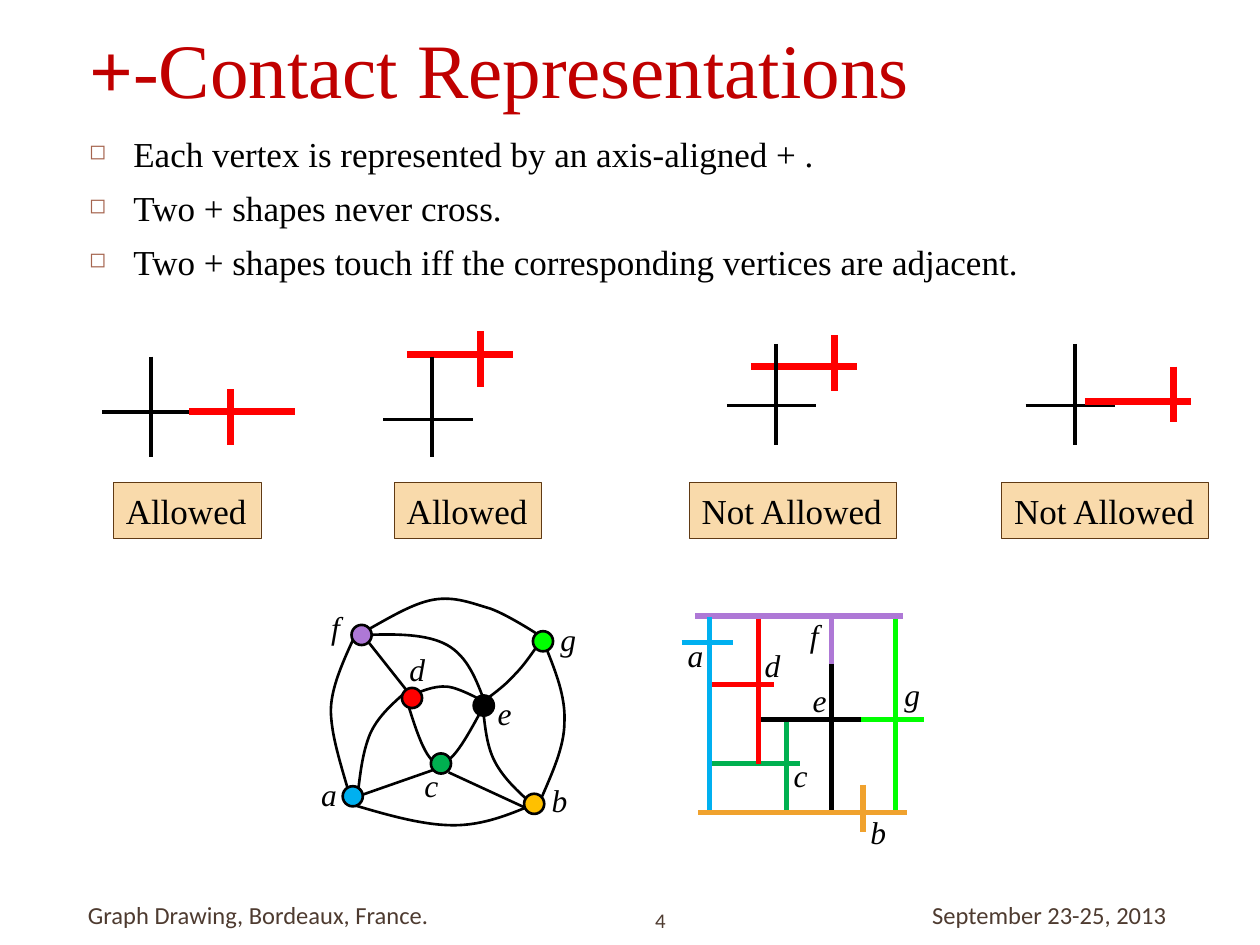
from lxml import etree
from pptx import Presentation
from pptx.dml.color import RGBColor
from pptx.enum.shapes import MSO_CONNECTOR, MSO_SHAPE
from pptx.enum.text import MSO_ANCHOR, MSO_AUTO_SIZE, PP_ALIGN
from pptx.oxml.ns import qn
from pptx.util import Inches, Pt

STRAIGHT = MSO_CONNECTOR.STRAIGHT
RECT, OVAL = MSO_SHAPE.RECTANGLE, MSO_SHAPE.OVAL
TOP, MIDDLE = MSO_ANCHOR.TOP, MSO_ANCHOR.MIDDLE
LEFT, RIGHT = PP_ALIGN.LEFT, PP_ALIGN.RIGHT
FIT = MSO_AUTO_SIZE.SHAPE_TO_FIT_TEXT

SERIF, SANS = "Times New Roman", "Calibri"
BLACK = RGBColor(0x00, 0x00, 0x00)
RED = RGBColor(0xFF, 0x00, 0x00)
GREEN = RGBColor(0x00, 0xB0, 0x50)
LIME = RGBColor(0x00, 0xFF, 0x00)
BLUE = RGBColor(0x00, 0xB0, 0xF0)
PURPLE = RGBColor(0xAE, 0x78, 0xD6)
YELLOW = RGBColor(0xFF, 0xC0, 0x00)
ORANGE = RGBColor(0xF0, 0xA2, 0x2E)
CRIMSON = RGBColor(0xC0, 0x00, 0x00)
BROWN = RGBColor(0x4E, 0x3B, 0x30)
SAND = RGBColor(0xF9, 0xDA, 0xAB)
UMBER = RGBColor(0x60, 0x3A, 0x14)

SLIDE_W, SLIDE_H = Inches(10), Inches(7.5)
COL, ROW = SLIDE_W // 1000, SLIDE_H // 750
NODE = 16
LABEL_W = {"a": 34, "b": 33, "c": 31, "d": 34, "e": 31, "f": 27, "g": 33}

BULLETS = [
    "Each vertex is represented by an axis-aligned + .",
    "Two + shapes never cross.",
    "Two + shapes touch iff the corresponding vertices are adjacent.",
]
EDGES = [
    [(36, 156), (31, 139), (26, 122), (24, 109), (22, 96), (22, 89), (25, 77),
     (28, 65), (34, 51), (41, 36)],
    [(48, 32), (68, 21), (87, 9), (104, 6), (121, 3), (135, 9), (149, 13),
     (163, 18), (186, 33), (186, 33)],
    [(41, 169), (68, 177), (96, 185), (120, 185), (143, 185), (163, 177), (182, 169)],
    [(193, 43), (201, 63), (209, 83), (208, 103), (208, 123), (198, 144), (189, 165)],
    [(44, 160), (46, 143), (48, 126), (54, 112), (60, 99), (70, 90), (80, 81)],
    [(48, 34), (86, 82)],
    [(49, 34), (74, 33), (99, 33), (115, 42), (131, 51), (138, 69), (145, 88)],
    [(182, 168), (171, 158), (160, 148), (153, 135), (146, 122), (145, 106), (143, 90)],
    [(82, 83), (90, 109), (98, 135), (108, 136), (118, 138), (130, 116), (142, 94)],
    [(83, 83), (94, 79), (104, 74), (115, 75), (125, 76), (142, 86), (147, 88),
     (152, 91), (148, 90), (144, 89)],
    [(146, 85), (154, 79), (162, 73), (169, 65), (176, 58), (182, 49), (189, 39)],
    [(44, 162), (107, 140)],
    [(181, 173), (116, 143)],
]
NODES = [(39, 26, PURPLE), (32, 154, BLUE), (183, 31, LIME), (176, 160, YELLOW),
         (79, 76, RED), (136, 82, BLACK), (102, 128, GREEN)]
GRAPH_LABELS = {"a": (5, 140), "d": (75, 41), "f": (13, 8), "g": (195, 17),
                "e": (145, 76), "c": (87, 133), "b": (188, 145)}
ARMS = [
    (94, 90, 94, 165, GREEN), (34, 63, 84, 63, RED), (11, 30, 52, 30, BLUE),
    (33, 126, 105, 126, GREEN), (74, 91, 153, 91, BLACK), (153, 91, 203, 91, LIME),
    (22, 9, 187, 9, PURPLE), (33, 10, 33, 163, BLUE), (72, 11, 72, 126, RED),
    (130, 44, 130, 163, BLACK), (181, 11, 181, 166, LIME), (130, 10, 130, 47, PURPLE),
    (24, 165, 190, 165, ORANGE), (155, 143, 155, 180, ORANGE),
]
ARM_LABELS = {"g": (178, 51), "e": (105, 56), "f": (103, 4), "d": (67, 28),
              "c": (90, 115), "b": (151, 160), "a": (6, 20)}
CASES = [
    (81, "Allowed", 9, 117, (0, 20, 39, 44), (69, 46, 33, 18)),
    (304, "Allowed", 9, 117, (0, 20, 39, 50), (19, 0, 58, 18)),
    (577, "Not Allowed", -30, 164, (0, 10, 39, 49), (19, 3, 66, 25)),
    (814, "Not Allowed", -19, 164, (0, 10, 39, 49), (47, 28, 70, 28)),
]


def grid(x, y, w, h):
    """Turn grid columns and rows into slide lengths."""
    return x * COL, y * ROW, w * COL, h * ROW


def style(p, font, size, color, bold=False, italic=False):
    """Format every run of a paragraph."""
    for r in p.runs:
        r.font.name, r.font.size = font, Pt(size)
        r.font.bold, r.font.italic = bold, italic
        r.font.color.rgb = color


def add_text(slide, box, text, font, size, color, anchor=TOP, align=LEFT,
             wrap=True, italic=False):
    """Add a text box in the given grid box and return its frame."""
    tf = slide.shapes.add_textbox(*grid(*box)).text_frame
    tf.word_wrap, tf.vertical_anchor = wrap, anchor
    tf.text = text
    for p in tf.paragraphs:
        p.alignment = align
        style(p, font, size, color, italic=italic)
    return tf


def add_line(slide, box, x1, y1, x2, y2, color, width):
    """Draw a straight line relative to the box."""
    x, y = box[:2]
    sp = slide.shapes.add_connector(STRAIGHT, (x + x1) * COL, (y + y1) * ROW,
                                    (x + x2) * COL, (y + y2) * ROW)
    sp.line.color.rgb, sp.line.width = color, Pt(width)
    etree.SubElement(sp._element.spPr, qn("a:effectLst"))


def add_edge(slide, box, points):
    """Draw a segment or a chain of Bezier curves relative to the box."""
    fb = slide.shapes.build_freeform(*points[0], scale=(COL, ROW))
    fb.add_line_segments(points[1:], close=False)
    sp = fb.convert_to_shape(box[0] * COL, box[1] * ROW)
    sp.shadow.inherit = False
    sp.fill.background()
    sp.line.color.rgb, sp.line.width = BLACK, Pt(1.5)
    steps = list(sp._element.iter(qn("a:lnTo")))
    for i in range(0, len(steps) - 2, 3):
        curve = etree.Element(qn("a:cubicBezTo"))
        steps[i].addprevious(curve)
        for step in steps[i:i + 3]:
            curve.append(step[0])
            step.getparent().remove(step)


def add_block(slide, kind, box, fill, line, width):
    """Add a filled and outlined preset shape."""
    sp = slide.shapes.add_shape(kind, *grid(*box))
    sp.shadow.inherit = False
    sp.fill.solid()
    sp.fill.fore_color.rgb = fill
    sp.line.color.rgb, sp.line.width = line, Pt(width)
    return sp


def add_labels(slide, box, labels):
    """Name the vertices relative to the box."""
    for name, (x, y) in labels.items():
        tf = add_text(slide, (box[0] + x, box[1] + y, LABEL_W[name], 40), name,
                      SERIF, 18, BLACK, wrap=False, italic=True)
        tf.auto_size = FIT


def add_title(slide, box):
    """Place the title with its bold plus sign."""
    tf = add_text(slide, box, "+", SERIF, 44, CRIMSON, MIDDLE)
    p = tf.paragraphs[0]
    p.add_run().text = "-Contact Representations"
    style(p, SERIF, 44, CRIMSON)
    p.runs[0].font.bold = True


def add_bullets(slide, box):
    """Place the list of rules with square bullets."""
    tf = add_text(slide, box, "\n".join(BULLETS), SERIF, 20, BLACK)
    for p in tf.paragraphs:
        p.space_before = Pt(7)
        pPr = p._p.get_or_add_pPr()
        pPr.set("marL", str(35 * COL))
        pPr.set("indent", str(-35 * COL))
        clr = etree.SubElement(pPr, qn("a:buClr"))
        etree.SubElement(clr, qn("a:srgbClr"), val="A5644E")
        etree.SubElement(pPr, qn("a:buSzPct"), val="60000")
        etree.SubElement(pPr, qn("a:buChar"), char="◻")


def add_case(slide, box, label, label_x, label_w, black, red):
    """Place a black and a red plus with the verdict below."""
    pluses = [(*black, 71, 80, BLACK, 2), (*red, 84, 44, RED, 4)]
    for x, y, hub_x, hub_y, w, h, color, width in pluses:
        add_line(slide, box, x, y + hub_y, x + w, y + hub_y, color, width)
    for x, y, hub_x, hub_y, w, h, color, width in pluses:
        add_line(slide, box, x + hub_x, y, x + hub_x, y + h, color, width)
    x, y, w, h = box
    sp = add_block(slide, RECT, (x + label_x, y + h - 44, label_w, 44), SAND, UMBER, 0.25)
    tf = sp.text_frame
    tf.text, tf.word_wrap, tf.auto_size = label, False, FIT
    tf.paragraphs[0].alignment = LEFT
    style(tf.paragraphs[0], SERIF, 20, BLACK)


def add_graph(slide, box):
    """Draw the planar graph."""
    for points in EDGES:
        add_edge(slide, box, points)
    for x, y, color in NODES:
        add_block(slide, OVAL, (box[0] + x, box[1] + y, NODE, NODE), color, BLACK, 1.5)
    add_labels(slide, box, GRAPH_LABELS)


def add_contacts(slide, box):
    """Draw the contact representation of the graph."""
    for *ends, color in ARMS:
        add_line(slide, box, *ends, color, 3)
    add_labels(slide, box, ARM_LABELS)


def add_footer(slide, box):
    """Place the venue, slide number and date."""
    x, y, w, h = box
    tf = add_text(slide, (x, y, 283, h), "Graph Drawing, Bordeaux, France.",
                  SANS, 14, BROWN, MIDDLE, RIGHT)
    tf.margin_left = 0
    add_text(slide, (x + 443, y + 11, 58, 27), "4", SANS, 11.9, BROWN, MIDDLE)
    add_text(slide, (x + w - 228, y, 228, h), "September 23-25, 2013", SANS, 14, BROWN, MIDDLE)


def main():
    """Build and save the slide."""
    prs = Presentation()
    prs.slide_width, prs.slide_height = SLIDE_W, SLIDE_H
    slide = prs.slides.add_slide(prs.slide_layouts[6])
    add_title(slide, (61, 0, 892, 108))
    add_bullets(slide, (61, 100, 939, 492))
    add_footer(slide, (67, 706, 891, 40))
    add_graph(slide, (240, 470, 230, 190))
    add_contacts(slide, (530, 480, 210, 200))
    for x, *case in CASES:
        add_case(slide, (x, 263, 164, 164), *case)
    prs.save("out.pptx")


if __name__ == "__main__":
    main()
